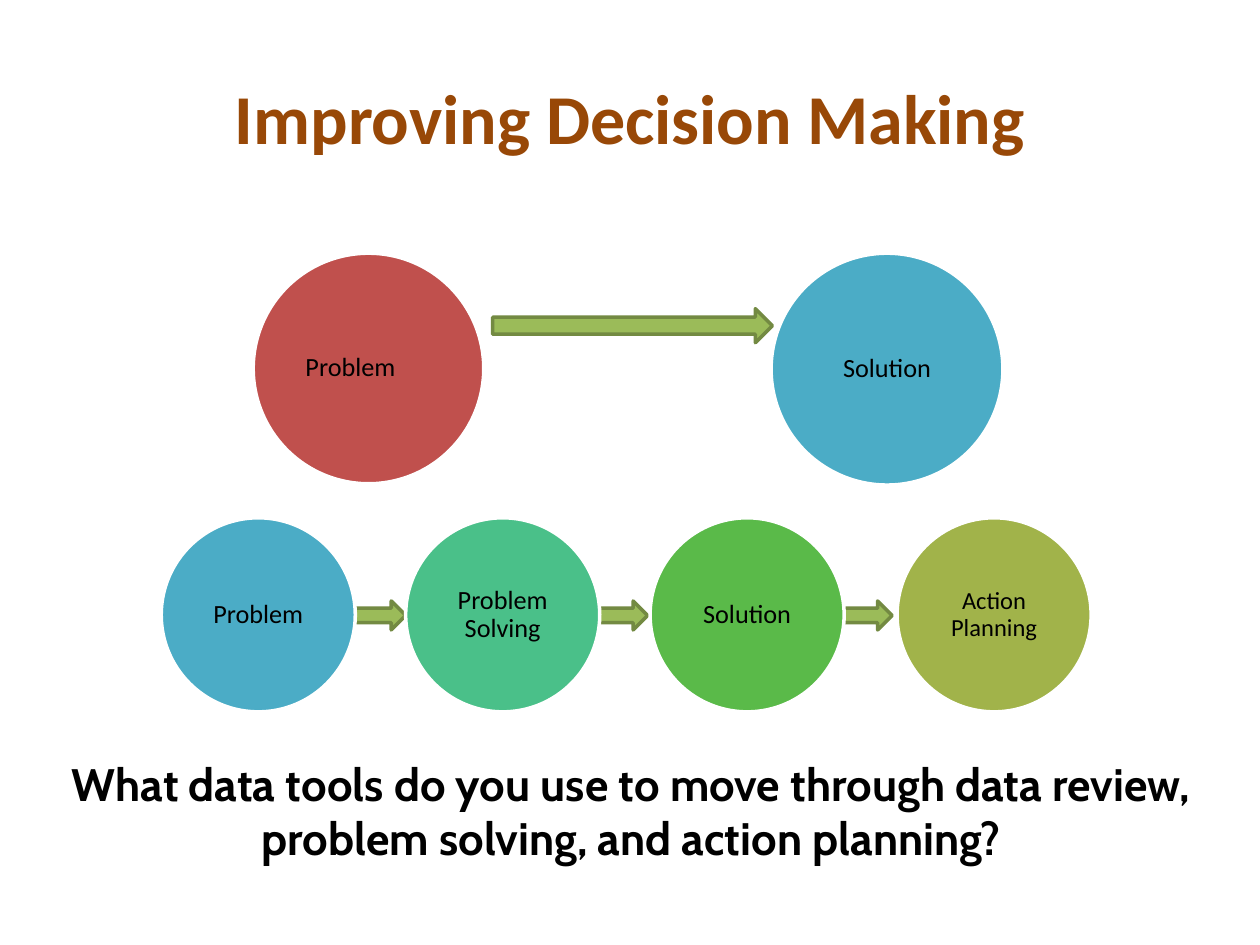
"""Build the slide on improving decision making."""
from typing import NamedTuple

from pptx import Presentation
from pptx.dml.color import RGBColor
from pptx.enum.shapes import MSO_SHAPE
from pptx.enum.text import MSO_ANCHOR, PP_ALIGN
from pptx.util import Inches, Pt


class Step(NamedTuple):
    label: str
    left: float
    top: float
    diameter: float
    color: str
    size: int = 15


class Arrow(NamedTuple):
    left: float
    top: float
    width: float
    height: float


SHORT_PATH = [
    Step("Problem\t", 2.01, 2.01, 1.83, "C0504D"),
    Step("Solution", 6.12, 2.01, 1.84, "4BACC6"),
]
FULL_PATH = [
    Step("Problem", 1.28, 4.11, 1.54, "4BACC6"),
    Step("Problem Solving", 3.22, 4.11, 1.54, "4AC089"),
    Step("Solution", 5.16, 4.11, 1.54, "5ABA49"),
    Step("Action Planning", 7.12, 4.11, 1.54, "A1B34A", 14),
]
ARROWS = [Arrow(3.91, 2.45, 2.22, 0.27)] + [
    Arrow(left, 4.77, 0.42, 0.23) for left in (2.8, 4.72, 6.66)
]
OVAL_TEXT_INSET = 0.146


def rgb(color: str) -> RGBColor:
    return RGBColor.from_string(color)


def write(shape, text: str, *, size: int, font="Calibri", color="000000",
          bold=False, anchor=MSO_ANCHOR.MIDDLE, spacing=None) -> None:
    frame = shape.text_frame
    frame.word_wrap = True
    frame.vertical_anchor = anchor
    paragraph = frame.paragraphs[0]
    paragraph.alignment = PP_ALIGN.CENTER
    paragraph.line_spacing = spacing
    run = paragraph.add_run()
    run.text = text
    run.font.name = font
    run.font.size = Pt(size)
    run.font.bold = bold
    run.font.color.rgb = rgb(color)


def add_filled(slide, preset, left: float, top: float, width: float,
               height: float, *, fill: str, line: str):
    shape = slide.shapes.add_shape(
        preset, Inches(left), Inches(top), Inches(width), Inches(height))
    shape.shadow.inherit = False
    shape.fill.solid()
    shape.fill.fore_color.rgb = rgb(fill)
    shape.line.color.rgb = rgb(line)
    shape.line.width = Pt(2)
    return shape


def draw_arrow(slide, arrow: Arrow) -> None:
    add_filled(slide, MSO_SHAPE.RIGHT_ARROW, *arrow, fill="9BBB59", line="738A42")


def draw_step(slide, step: Step) -> None:
    circle = add_filled(slide, MSO_SHAPE.OVAL, step.left, step.top, step.diameter,
                        step.diameter, fill=step.color, line="FFFFFF")
    frame = circle.text_frame
    built_in = step.diameter * OVAL_TEXT_INSET
    frame.margin_left = frame.margin_right = Inches(0.39 - built_in)
    frame.margin_top = frame.margin_bottom = Inches(0.32 - built_in)
    write(circle, step.label, size=step.size, spacing=0.9)


def main() -> None:
    deck = Presentation()
    deck.slide_width, deck.slide_height = Inches(10), Inches(7.5)
    slide = deck.slides.add_slide(deck.slide_layouts[5])

    title = slide.shapes.title
    title.left, title.top = Inches(0.5), Inches(0.3)
    title.width, title.height = Inches(9), Inches(1.25)
    write(title, "Improving Decision Making", size=40, color="984807", bold=True)

    for arrow in ARROWS:
        draw_arrow(slide, arrow)
    for step in FULL_PATH + SHORT_PATH:
        draw_step(slide, step)

    question = slide.shapes.add_textbox(
        Inches(0.45), Inches(5.95), Inches(9.13), Inches(0.98))
    write(question, "What data tools do you use to move through data review, "
          "problem solving, and action planning?", size=26, font="Cabin",
          bold=True, anchor=MSO_ANCHOR.TOP)

    deck.save("out.pptx")


if __name__ == "__main__":
    main()
